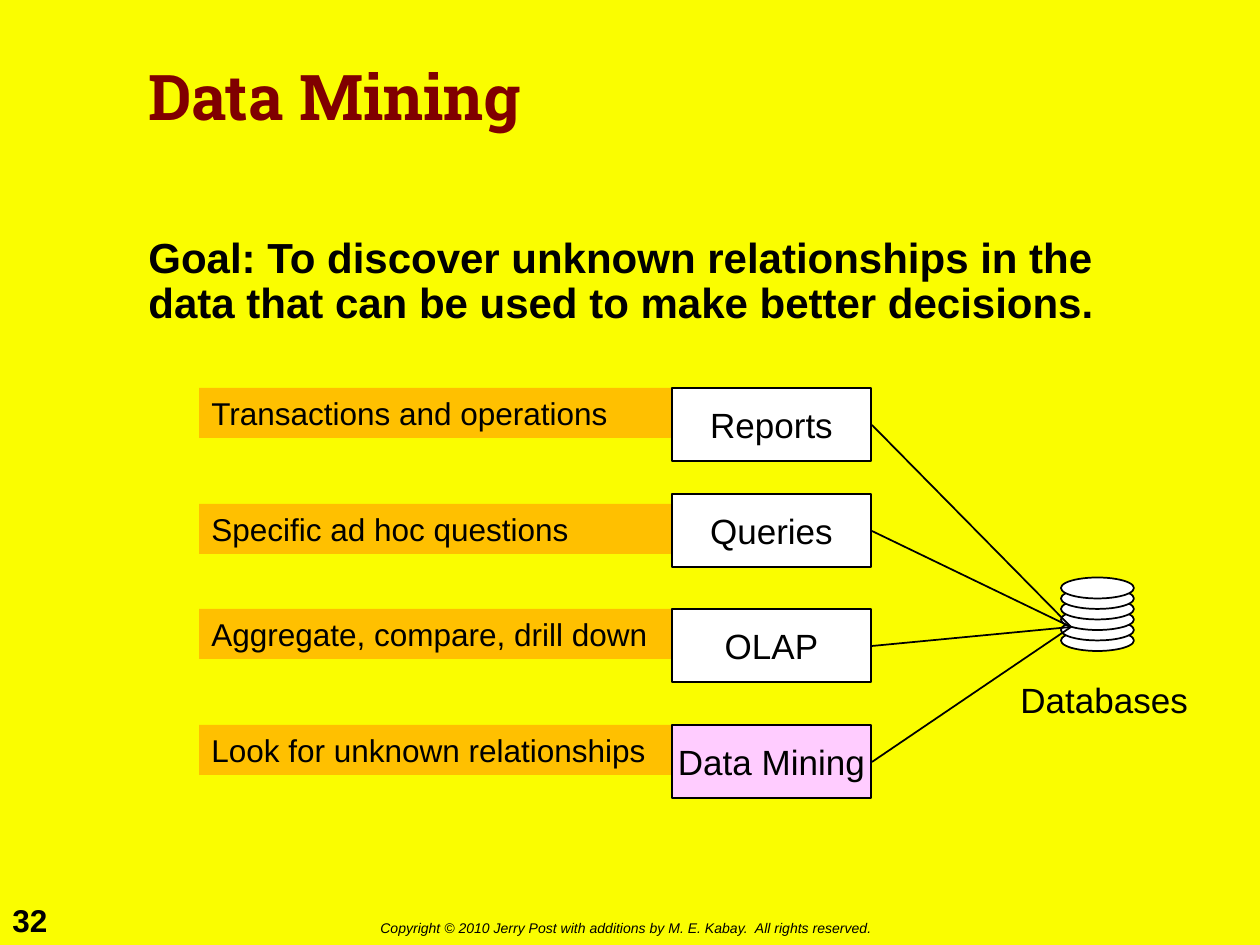
from dataclasses import dataclass

from lxml.etree import SubElement as Sub
from pptx import Presentation
from pptx.dml.color import RGBColor as RGB
from pptx.enum.shapes import MSO_CONNECTOR as Link, MSO_SHAPE as Form
from pptx.enum.text import MSO_ANCHOR as Anchor, PP_ALIGN as Align
from pptx.enum.text import MSO_AUTO_SIZE as Fit
from pptx.oxml.ns import qn
from pptx.util import Pt

SCALE = 914400 / 126


@dataclass(frozen=True)
class Theme:
    page: RGB = RGB(0xFA, 0xFD, 0x00)
    ink: RGB = RGB(0, 0, 0)
    head: RGB = RGB(0x80, 0, 0)
    bar: RGB = RGB(0xFF, 0xC0, 0)
    white: RGB = RGB(0xFF, 0xFF, 0xFF)
    pink: RGB = RGB(0xFF, 0xCC, 0xFF)
    sans: str = "Arial"
    slab: str = "Roboto Slab"
    title: int = 36
    goal: int = 24
    label: int = 20
    note: int = 18
    small: int = 8


T = Theme()
ROWS = [
    ("Transactions and operations", "Reports", 388, 388, T.white),
    ("Specific ad hoc questions", "Queries", 504, 494, T.white),
    ("Aggregate, compare, drill down", "OLAP", 609, 609, T.white),
    ("Look for unknown relationships", "Data Mining", 725, 725, T.pink),
]
HUB = (1071, 627)


def px(*nums):
    return [round(n * SCALE) for n in nums]


def write(shape, text, size, wrap=True, anchor=Anchor.TOP, align=Align.LEFT,
          bold=False, italic=False, color=T.ink, face=T.sans):
    frame = shape.text_frame
    frame.text = text
    frame.word_wrap = wrap
    frame.auto_size = Fit.NONE
    frame.vertical_anchor = anchor
    para = frame.paragraphs[0]
    para.alignment = align
    font = para.font
    font.name, font.size = face, Pt(size)
    font.bold, font.italic = bold, italic
    font.color.rgb = color
    return para


def add_text(slide, spot, text, size, **style):
    box = slide.shapes.add_textbox(*px(*spot))
    return write(box, text, size, **style)


def add_form(slide, form, spot, fill, edge=True):
    shape = slide.shapes.add_shape(form, *px(*spot))
    shape.shadow.inherit = False
    shape.fill.solid()
    shape.fill.fore_color.rgb = fill
    if edge:
        shape.line.color.rgb = T.ink
        shape.line.width = Pt(1)
    else:
        shape.line.fill.background()
    return shape


def add_line(slide, start, end):
    line = slide.shapes.add_connector(Link.STRAIGHT, *px(*start, *end))
    line.line.color.rgb = T.ink
    line.line.width = Pt(1)
    Sub(line._element.spPr, qn("a:effectLst"))


def add_title(slide):
    title = slide.shapes.title
    title.left, title.top, title.width, title.height = px(136, 21, 987, 158)
    para = write(title, "Data Mining", T.title, anchor=Anchor.MIDDLE,
                 bold=True, color=T.head, face=T.slab)
    para.line_spacing = 0.9


def add_goal(slide):
    box = slide.shapes.add_textbox(*px(136, 231, 987, 192))
    props = box.text_frame.paragraphs[0]._p.get_or_add_pPr()
    indent = px(47)[0]
    props.set("marL", str(indent))
    props.set("indent", str(-indent))
    tint = Sub(props, qn("a:buClr"))
    Sub(tint, qn("a:srgbClr"), val=str(T.ink))
    Sub(props, qn("a:buChar"), char="➢")
    para = write(box, "Goal: To discover unknown relationships in the data "
                 "that can be used to make better decisions.", T.goal, bold=True)
    para.line_spacing = 0.9


def add_store(slide):
    for step in range(6):
        add_form(slide, Form.OVAL, (1061, 630 - 10.5 * step, 73, 21), T.white)
    add_text(slide, (1008, 672, 193, 54), "Databases", T.label, wrap=False)


def add_rows(slide):
    for note, name, top, lid, fill in ROWS:
        bar = add_form(slide, Form.RECTANGLE, (199, top, 483, 50), T.bar, False)
        write(bar, note, T.note)
        box = add_form(slide, Form.RECTANGLE, (672, lid, 199, 73), fill)
        write(box, name, T.label, wrap=False, anchor=Anchor.MIDDLE,
              align=Align.CENTER)
        add_line(slide, (872, lid + 37), HUB)


def add_foot(slide):
    add_text(slide, (0, 895, 64, 50), "32", T.note, wrap=False, bold=True)
    add_text(slide, (368, 913, 532, 30),
             "Copyright © 2010 Jerry Post with additions by M. E. Kabay.  "
             "All rights reserved.", T.small, wrap=False, italic=True)


def main():
    deck = Presentation()
    deck.slide_width, deck.slide_height = px(1260, 945)
    slide = deck.slides.add_slide(deck.slide_layouts[5])
    back = slide.background.fill
    back.solid()
    back.fore_color.rgb = T.page
    add_foot(slide)
    add_title(slide)
    add_goal(slide)
    add_store(slide)
    add_rows(slide)
    deck.save("out.pptx")


if __name__ == "__main__":
    main()
